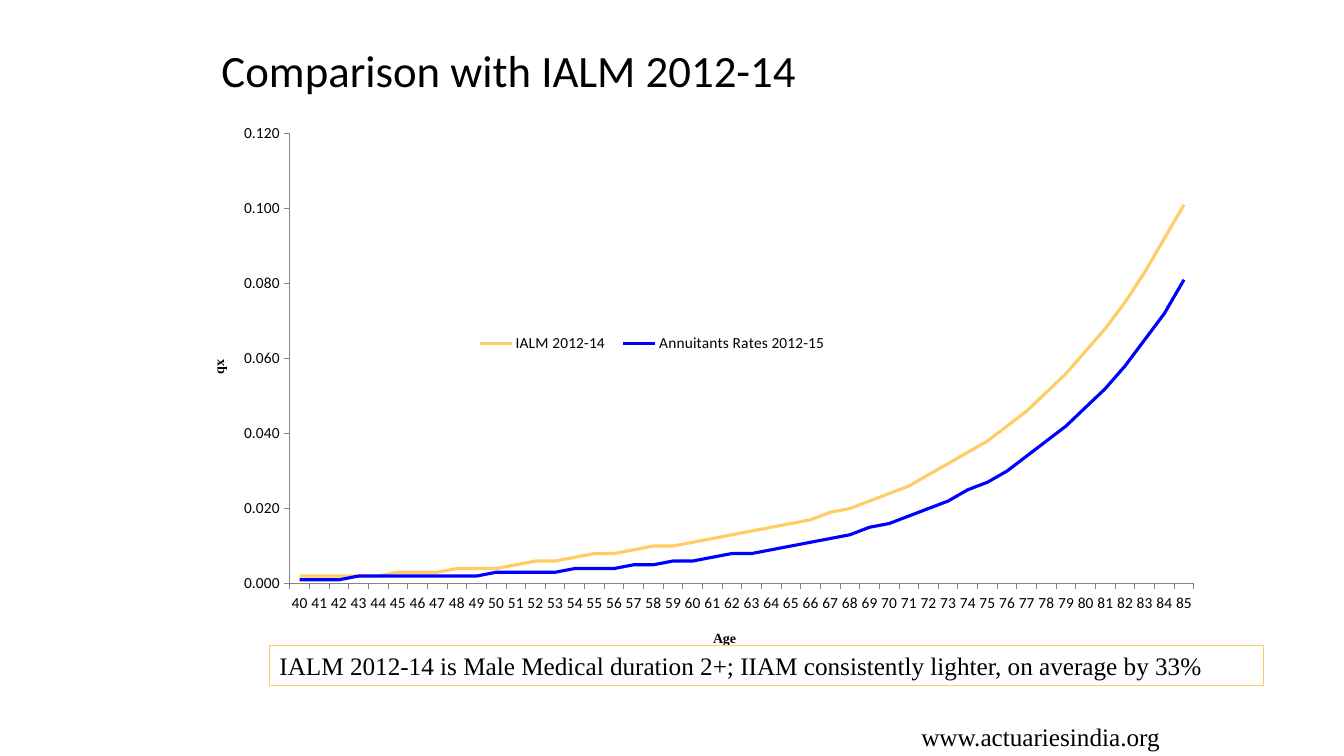
from lxml import etree
from pptx import Presentation
from pptx.chart.data import CategoryChartData
from pptx.dml.color import RGBColor
from pptx.enum.chart import XL_CHART_TYPE, XL_LEGEND_POSITION, XL_TICK_MARK
from pptx.enum.shapes import MSO_SHAPE
from pptx.enum.text import MSO_ANCHOR, PP_ALIGN
from pptx.oxml.ns import qn
from pptx.util import Pt

LINE_CHART = XL_CHART_TYPE.LINE
LEGEND_RIGHT = XL_LEGEND_POSITION.RIGHT
TICK_OUTSIDE, TICK_NONE = XL_TICK_MARK.OUTSIDE, XL_TICK_MARK.NONE
RECTANGLE = MSO_SHAPE.RECTANGLE
TOP, MIDDLE = MSO_ANCHOR.TOP, MSO_ANCHOR.MIDDLE
LEFT = PP_ALIGN.LEFT

TITLE = "Comparison with IALM 2012-14"
NOTE = "IALM 2012-14 is Male Medical duration 2+; IIAM consistently lighter, on average by 33%"
WEBSITE = "www.actuariesindia.org"
AGES = range(40, 86)
RATES = {
    "IALM 2012-14": [
        0.002, 0.002, 0.002, 0.002, 0.002, 0.003, 0.003, 0.003, 0.004, 0.004,
        0.004, 0.005, 0.006, 0.006, 0.007, 0.008, 0.008, 0.009, 0.01, 0.01,
        0.011, 0.012, 0.013, 0.014, 0.015, 0.016, 0.017, 0.019, 0.02, 0.022,
        0.024, 0.026, 0.029, 0.032, 0.035, 0.038, 0.042, 0.046, 0.051, 0.056,
        0.062, 0.068, 0.075, 0.083, 0.092, 0.101],
    "Annuitants Rates 2012-15": [
        0.001, 0.001, 0.001, 0.002, 0.002, 0.002, 0.002, 0.002, 0.002, 0.002,
        0.003, 0.003, 0.003, 0.003, 0.004, 0.004, 0.004, 0.005, 0.005, 0.006,
        0.006, 0.007, 0.008, 0.008, 0.009, 0.01, 0.011, 0.012, 0.013, 0.015,
        0.016, 0.018, 0.02, 0.022, 0.025, 0.027, 0.03, 0.034, 0.038, 0.042,
        0.047, 0.052, 0.058, 0.065, 0.072, 0.081],
}

THEME = {
    "text": RGBColor(0, 0, 0),
    "axis": RGBColor(0x86, 0x86, 0x86),
    "box": RGBColor(0xFF, 0xCC, 0x66),
    "series": [RGBColor(0xFF, 0xCC, 0x66), RGBColor(0, 0, 0xFF)],
    "sans": "Calibri",
    "serif": "Times New Roman",
    "title_size": 32,
    "text_size": 18,
    "label_size": 11,
    "axis_title_size": 10,
}

# Left, top, width, height in points
TITLE_BOX = (151, 19, 714, 62)
CHART_BOX = (121.5, 81.5, 757, 409)
NOTE_BOX = (192.5, 461, 710, 29)
WEBSITE_BOX = (651, 512, 228, 29)

# Fractions of the chart's width and height
PLOT_LAYOUT = {"layoutTarget": "inner", "xMode": "edge", "yMode": "edge",
               "x": 0.113, "y": 0.034, "w": 0.853, "h": 0.786}
LEGEND_LAYOUT = {"xMode": "edge", "yMode": "edge", "x": 0.28, "y": 0.37, "w": 0.35, "h": 0.06}
AGE_LAYOUT = {"xMode": "edge", "yMode": "edge", "x": 0.51, "y": 0.895}
RATE_LAYOUT = {"xMode": "edge", "yMode": "edge", "x": 0.035, "y": 0.425}


def points(box):
    return [Pt(length) for length in box]


def format_font(font, face, size, bold=False):
    values = {"name": face, "size": Pt(size), "bold": bold}
    for name, value in values.items():
        setattr(font, name, value)
    font.color.rgb = THEME["text"]


def write_text(shape, text, face, size, anchor=TOP):
    frame = shape.text_frame
    frame.word_wrap = True
    frame.vertical_anchor = anchor
    paragraph = frame.paragraphs[0]
    paragraph.text = text
    paragraph.alignment = LEFT
    format_font(paragraph.runs[0].font, face, size)


def set_layout(element, values):
    """Give a chart part a manual layout, in the place the schema asks for."""
    for old in element.findall(qn("c:layout")):
        element.remove(old)
    layout = etree.Element(qn("c:layout"))
    manual = etree.SubElement(layout, qn("c:manualLayout"))
    for name, value in values.items():
        etree.SubElement(manual, qn("c:" + name)).set("val", str(value))
    overlay = element.find(qn("c:overlay"))
    if overlay is None:
        element.insert(0, layout)
    else:
        overlay.addprevious(layout)


def format_axis(axis, title, layout):
    values = {"has_major_gridlines": False, "major_tick_mark": TICK_OUTSIDE,
              "minor_tick_mark": TICK_NONE}
    for name, value in values.items():
        setattr(axis, name, value)
    axis.format.line.color.rgb = THEME["axis"]
    axis.format.line.width = Pt(0.75)
    format_font(axis.tick_labels.font, THEME["sans"], THEME["label_size"])
    frame = axis.axis_title.text_frame
    frame.text = title
    format_font(frame.paragraphs[0].runs[0].font, THEME["serif"], THEME["axis_title_size"], bold=True)
    set_layout(axis.axis_title._element, layout)


def add_rates_chart(slide):
    data = CategoryChartData(number_format="0.000")
    data.categories = [str(age) for age in AGES]
    for name, rates in RATES.items():
        data.add_series(name, rates)
    chart = slide.shapes.add_chart(LINE_CHART, *points(CHART_BOX), data).chart
    chart.has_title = False
    format_font(chart.font, THEME["serif"], THEME["axis_title_size"])

    format_axis(chart.category_axis, "Age", AGE_LAYOUT)
    rate_axis = chart.value_axis
    format_axis(rate_axis, "qx", RATE_LAYOUT)
    rate_axis.axis_title._element.find(".//" + qn("a:bodyPr")).set("rot", "-5400000")
    for name, value in {"minimum_scale": 0, "maximum_scale": 0.12, "major_unit": 0.02}.items():
        setattr(rate_axis, name, value)
    rate_axis.tick_labels.number_format = "0.000"
    rate_axis.tick_labels.number_format_is_linked = False

    chart.plots[0].vary_by_categories = False
    for series, color in zip(chart.plots[0].series, THEME["series"]):
        series.smooth = False
        series.format.line.color.rgb = color
        series.format.line.width = Pt(2.25)

    chart.has_legend = True
    legend = chart.legend
    legend.position = LEGEND_RIGHT
    legend.include_in_layout = False
    format_font(legend.font, THEME["sans"], THEME["label_size"])
    set_layout(legend._element, LEGEND_LAYOUT)
    set_layout(chart._chartSpace.find(".//" + qn("c:plotArea")), PLOT_LAYOUT)


def main():
    presentation = Presentation()
    presentation.slide_width, presentation.slide_height = Pt(960), Pt(540)
    slide = presentation.slides.add_slide(presentation.slide_layouts[5])

    title = slide.shapes.title
    title.left, title.top, title.width, title.height = points(TITLE_BOX)
    write_text(title, TITLE, THEME["sans"], THEME["title_size"], MIDDLE)

    website = slide.shapes.add_textbox(*points(WEBSITE_BOX))
    write_text(website, WEBSITE, THEME["serif"], THEME["text_size"])

    add_rates_chart(slide)

    note = slide.shapes.add_shape(RECTANGLE, *points(NOTE_BOX))
    note.shadow.inherit = False
    note.fill.background()
    note.line.color.rgb = THEME["box"]
    note.line.width = Pt(0.75)
    write_text(note, NOTE, THEME["serif"], THEME["text_size"])

    presentation.save("out.pptx")


if __name__ == "__main__":
    main()
